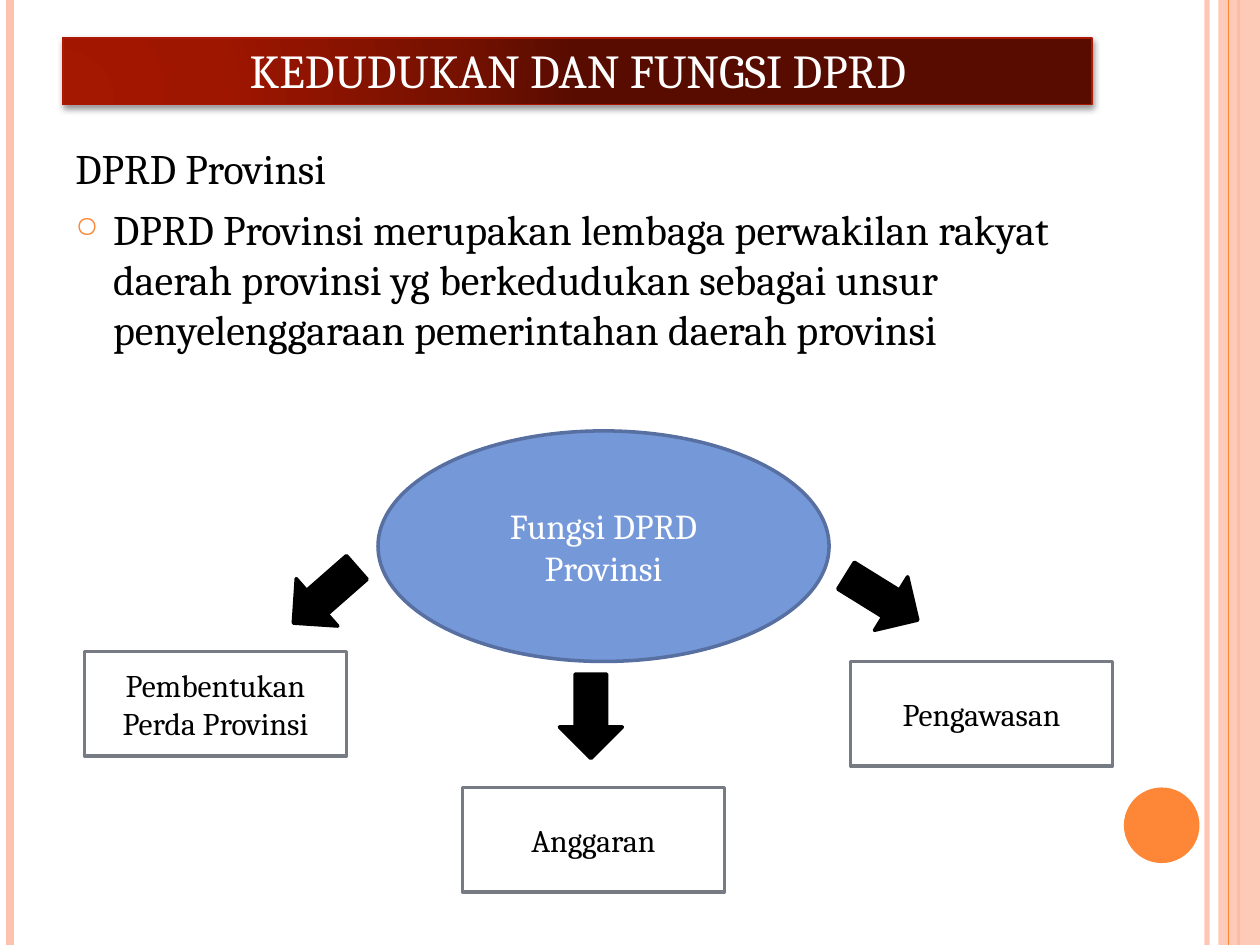
import pptx
import pptx.util
import pptx.dml.color
import pptx.enum.shapes
import pptx.enum.text
import pptx.oxml
import pptx.oxml.ns

INCH, PT = pptx.util.Inches, pptx.util.Pt
KIND = pptx.enum.shapes.MSO_SHAPE
ALIGN = pptx.enum.text.PP_ALIGN
ANCHOR = pptx.enum.text.MSO_ANCHOR
NS = pptx.oxml.ns.nsdecls("a")

# Content
TITLE = "KEDUDUKAN DAN FUNGSI DPRD"
HEAD = "DPRD Provinsi"
BODY = ("DPRD Provinsi merupakan lembaga perwakilan rakyat daerah provinsi yg "
        "berkedudukan sebagai unsur penyelenggaraan pemerintahan daerah provinsi")
HUB = "Fungsi DPRD Provinsi"
# Each function: text, box left and top, arrow left and top, arrow turn
ROLES = [
    ("Pembentukan Perda Provinsi", (0.67, 5.17), (2.33, 4.39), 48.8),
    ("Anggaran", (3.67, 6.25), (4.44, 5.35), 0),
    ("Pengawasan", (6.75, 5.25), (6.75, 4.41), 301.8),
]

# Style
FONT = "Cambria"
COLOR = {"white": "FFFFFF", "black": "000000", "pink": "FEC3AE",
         "orange": "FE8637", "blue": "7598D9", "navy": "5770A1",
         "gray": "777C84", "red": "AC1800"}
GRAD = [(0, "A41700"), (30, "9F1600"), (75, "771100"), (100, "580C00")]
WIDE, HIGH = 10, 7.5
LEFT, SPAN = 0.5, 8.17
BOX, ARROW = (2.08, 0.83), (0.5, 0.67)
# Side stripes: x, colour, width, opacity
RULES = [(9.58, "pink", 3, 93), (0.08, "pink", 4.5, 100),
         (9.83, "orange", 1.5, 100)]
THIN = (9.75, "orange", 0.75, 100)

deck = pptx.Presentation()
deck.slide_width, deck.slide_height = INCH(WIDE), INCH(HIGH)
slide = deck.slides.add_slide(deck.slide_layouts[6])


def paint(target, name):
    target.solid()
    target.fore_color.rgb = pptx.dml.color.RGBColor.from_string(COLOR[name])


def fade(part, share):
    if share < 100:
        tint = part.find(".//" + pptx.oxml.ns.qn("a:srgbClr"))
        tint.append(pptx.oxml.parse_xml(f'<a:alpha {NS} val="{share * 1000}"/>'))


def stripe(x, name, width, share):
    line = slide.shapes.add_connector(
        pptx.enum.shapes.MSO_CONNECTOR.STRAIGHT, INCH(x), 0, INCH(x), INCH(HIGH))
    paint(line.line.fill, name)
    line.line.width = PT(width)
    props = line.element.spPr
    fade(props, share)
    props.append(pptx.oxml.parse_xml(f"<a:effectLst {NS}/>"))


def style(para, size, name):
    font = para.font
    font.name, font.size = FONT, PT(size)
    paint(font.fill, name)


def shape(kind, spot, size, fill=None, edge=None, width=2):
    item = slide.shapes.add_shape(kind, *map(INCH, spot + size))
    if fill:
        item.shadow.inherit = False
        paint(item.fill, fill)
    if edge:
        paint(item.line.fill, edge)
        item.line.width = PT(width)
    else:
        item.line.fill.background()
    return item


def label(item, text, size, name, anchor=ANCHOR.MIDDLE):
    frame = item.text_frame
    frame.word_wrap, frame.vertical_anchor = True, anchor
    para = frame.paragraphs[0]
    para.text, para.alignment = text, ALIGN.CENTER
    style(para, size, name)


# Side decoration
for rule in RULES:
    stripe(*rule)
band = shape(KIND.RECTANGLE, (9.67, 0), (0.33, HIGH), "pink")
fade(band.element.spPr, 87)
stripe(*THIN)
shape(KIND.OVAL, (8.92, 6.25), (0.6, 0.6), "orange")

# Title bar with radial gradient and soft shadow
bar = shape(KIND.RECTANGLE, (LEFT, 0.3), (SPAN, 0.53), edge="red", width=1)
stops = "".join(f'<a:gs pos="{at * 1000}"><a:srgbClr val="{hue}"/></a:gs>'
                for at, hue in GRAD)
props = bar.element.spPr
props.insert(2, pptx.oxml.parse_xml(
    f'<a:gradFill {NS} rotWithShape="1"><a:gsLst>{stops}</a:gsLst>'
    '<a:path path="circle"><a:fillToRect l="5000" t="100000" r="120000" '
    'b="10000"/></a:path></a:gradFill>'))
props.append(pptx.oxml.parse_xml(
    f'<a:effectLst {NS}><a:outerShdw blurRad="{PT(4)}" dist="{PT(1.6)}" '
    'dir="5400000" rotWithShape="0"><a:srgbClr val="000000">'
    '<a:alpha val="42000"/></a:srgbClr></a:outerShdw></a:effectLst>'))
label(bar, TITLE, 27, "white", ANCHOR.BOTTOM)

# Body text
frame = slide.shapes.add_textbox(
    *map(INCH, (LEFT, 1.08, SPAN, 2.17))).text_frame
frame.word_wrap = True
head, point = frame.paragraphs[0], frame.add_paragraph()
head.text, point.text = HEAD, BODY
point.space_before = PT(6)
look = point._p.get_or_add_pPr()
look.set("marL", str(INCH(0.3)))
look.set("indent", str(INCH(-0.3)))
for mark in (f'<a:buClr {NS}><a:srgbClr val="{COLOR["orange"]}"/></a:buClr>',
             f'<a:buSzPct {NS} val="70000"/>',
             f'<a:buChar {NS} char="○"/>'):
    look.append(pptx.oxml.parse_xml(mark))
for para in (head, point):
    style(para, 24, "black")

# Hub and its functions
hub = shape(KIND.OVAL, (3, 3.42), (3.58, 1.83), "blue", "navy")
label(hub, HUB, 20, "white")
for text, spot, tip, turn in ROLES:
    arrow = shape(KIND.DOWN_ARROW, tip, ARROW, "black", "black")
    arrow.rotation = turn
    label(shape(KIND.RECTANGLE, spot, BOX, "white", "gray"), text, 18, "black")

deck.save("out.pptx")
